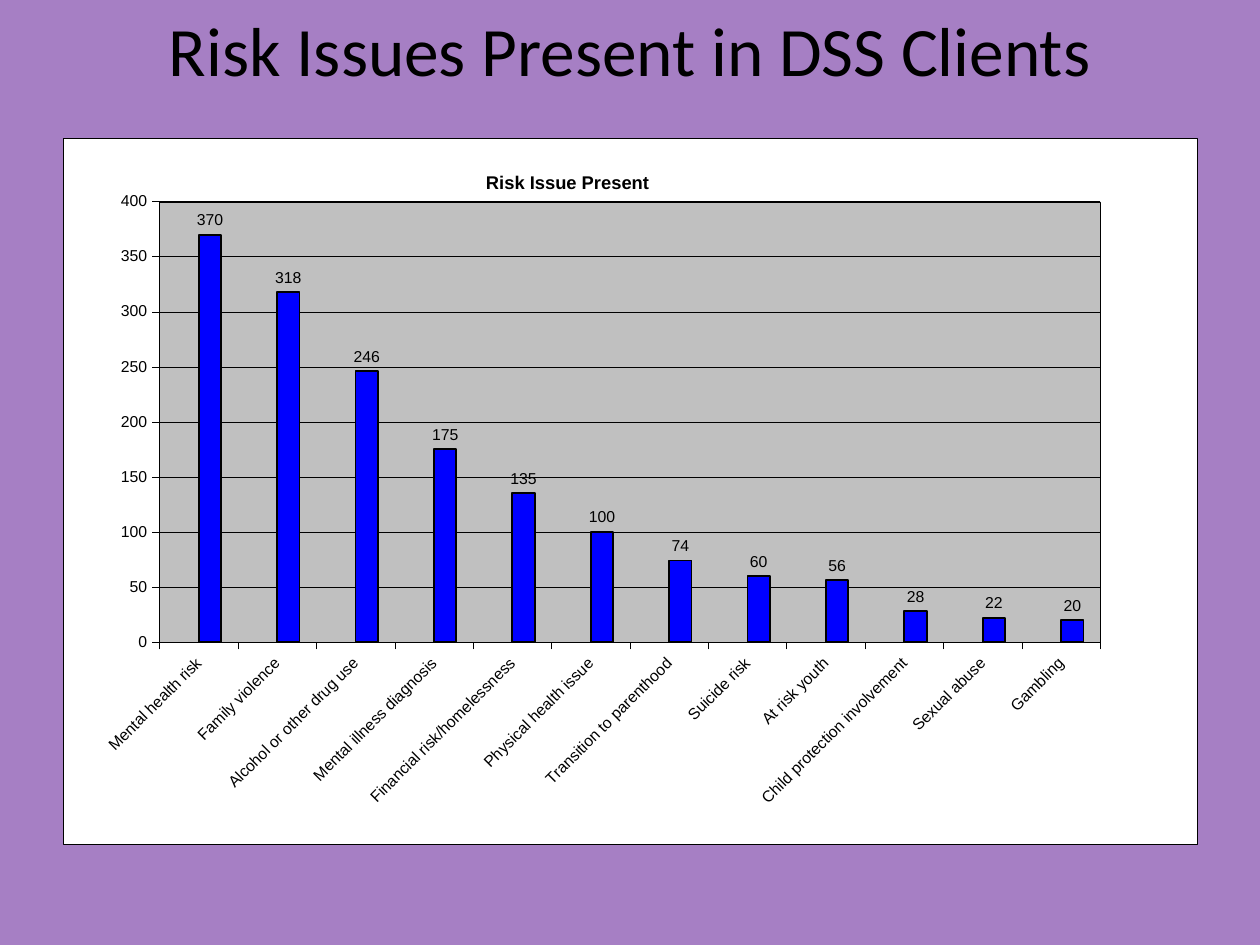
from lxml.etree import SubElement
from pptx import Presentation
from pptx.chart.data import CategoryChartData
from pptx.dml.color import RGBColor
from pptx.enum.chart import XL_CHART_TYPE, XL_LABEL_POSITION, XL_TICK_MARK
from pptx.enum.text import MSO_ANCHOR, PP_ALIGN
from pptx.oxml import parse_xml
from pptx.oxml.ns import nsdecls, qn
from pptx.util import Pt

TITLE = "Risk Issues Present in DSS Clients"
HEAD = "Risk Issue Present"
RISKS = [
    ("Mental health risk", 370),
    ("Family violence", 318),
    ("Alcohol or other drug use", 246),
    ("Mental illness diagnosis", 175),
    ("Financial risk/homelessness", 135),
    ("Physical health issue", 100),
    ("Transition to parenthood", 74),
    ("Suicide risk", 60),
    ("At risk youth", 56),
    ("Child protection involvement", 28),
    ("Sexual abuse", 22),
    ("Gambling", 20),
]
COLORS = {"back": "A67FC4", "ink": "000000", "paper": "FFFFFF",
          "plot": "C0C0C0", "empty": "9999FF", "bar": "0000FF"}
TITLE_BOX = (63, 38, 1134, 21)
CHART_BOX = (63, 138, 1134, 706)
PLOT = {"x": 0.085, "y": 0.09, "w": 0.83, "h": 0.624}
HEAD_AT = {"x": 0.37, "y": 0.04}


def px(n):
    return round(n * 914400 / 126)


def rgb(name):
    return RGBColor.from_string(COLORS[name])


def style(font, face, size, bold=False):
    font.name, font.size, font.bold = face, Pt(size), bold
    font.color.rgb = rgb("ink")


def edge(line, width):
    line.color.rgb = rgb("ink")
    line.width = Pt(width)


def layout(spots, inner=False):
    root = parse_xml(f"<c:layout {nsdecls('c')}/>")
    manual = SubElement(root, qn("c:manualLayout"))
    if inner:
        SubElement(manual, qn("c:layoutTarget")).set("val", "inner")
    for axis in "xy":
        SubElement(manual, qn(f"c:{axis}Mode")).set("val", "edge")
    for key, val in spots.items():
        SubElement(manual, qn(f"c:{key}")).set("val", str(val))
    return root


def panel(fill):
    return parse_xml(
        f'<c:spPr {nsdecls("c", "a")}>'
        f'<a:solidFill><a:srgbClr val="{COLORS[fill]}"/></a:solidFill>'
        f'<a:ln w="{Pt(0.25)}"><a:solidFill><a:srgbClr val="{COLORS["ink"]}"/>'
        '</a:solidFill></a:ln></c:spPr>')


def clear(node):
    for old in node.findall(qn("c:layout")):
        node.remove(old)


def add_title(slide):
    frame = slide.shapes.add_textbox(*map(px, TITLE_BOX)).text_frame
    frame.word_wrap = True
    frame.vertical_anchor = MSO_ANCHOR.MIDDLE
    para = frame.paragraphs[0]
    para.alignment = PP_ALIGN.CENTER
    run = para.add_run()
    run.text = TITLE
    style(run.font, "Calibri", 39.6)


def add_bars(slide):
    names, counts = zip(*RISKS)
    data = CategoryChartData()
    data.categories = names
    data.add_series("Series 1", [None] * len(names))
    data.add_series("Series 2", counts)
    chart = slide.shapes.add_chart(
        XL_CHART_TYPE.COLUMN_CLUSTERED, *map(px, CHART_BOX), data).chart
    style(chart.font, "Arial", 9)
    chart.has_legend = False

    run = chart.chart_title.text_frame.paragraphs[0].add_run()
    run.text = HEAD
    style(run.font, "Arial", 10.5, True)
    head = chart.chart_title._element
    clear(head)
    head.find(qn("c:tx")).addnext(layout(HEAD_AT))

    for axis in (chart.category_axis, chart.value_axis):
        axis.major_tick_mark = XL_TICK_MARK.OUTSIDE
        axis.minor_tick_mark = XL_TICK_MARK.NONE
        style(axis.tick_labels.font, "Arial", 9)
        edge(axis.format.line, 0.25)
    tilt = chart.category_axis._element.find(qn("c:txPr")).find(qn("a:bodyPr"))
    tilt.set("rot", "-2700000")
    tilt.set("vert", "horz")
    scale = chart.value_axis
    scale.minimum_scale, scale.maximum_scale, scale.major_unit = 0, 400, 50
    edge(scale.major_gridlines.format.line, 0.25)

    plot = chart.plots[0]
    plot.gap_width, plot.overlap = 150, 0
    plot.vary_by_categories = False
    for series, fill in zip(plot.series, ("empty", "bar")):
        series.format.fill.solid()
        series.format.fill.fore_color.rgb = rgb(fill)
        edge(series.format.line, 1)
        labels = series.data_labels
        labels.show_value = True
        labels.position = XL_LABEL_POSITION.OUTSIDE_END
        style(labels.font, "Arial", 9)

    body = chart._chartSpace.find(qn("c:chart"))
    area = body.find(qn("c:plotArea"))
    clear(area)
    area.insert(0, layout(PLOT, True))
    area.append(panel("plot"))
    body.addnext(panel("paper"))


def main():
    deck = Presentation()
    deck.slide_width, deck.slide_height = px(1260), px(945)
    slide = deck.slides.add_slide(deck.slide_layouts[6])
    slide.background.fill.solid()
    slide.background.fill.fore_color.rgb = rgb("back")
    add_title(slide)
    add_bars(slide)
    deck.save("out.pptx")


if __name__ == "__main__":
    main()
